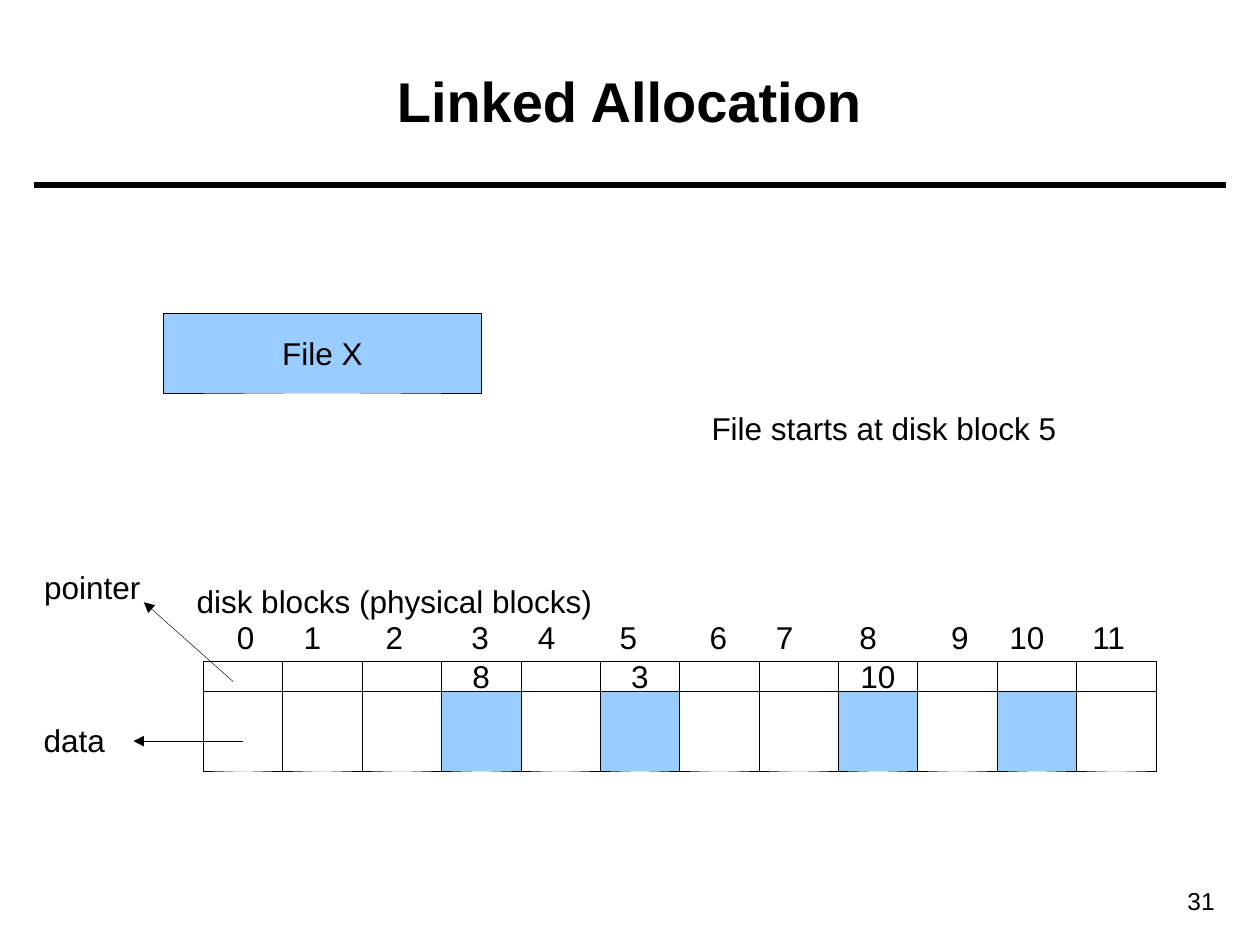
import pptx
import pptx.dml.color
import pptx.enum.shapes
import pptx.enum.text
import pptx.oxml
import pptx.oxml.ns
import pptx.util
from pptx.util import Cm

BLACK = pptx.dml.color.RGBColor(0x00, 0x00, 0x00)
FILE_BLUE = pptx.dml.color.RGBColor(0x99, 0xCC, 0xFF)
ALIGN = pptx.enum.text.PP_ALIGN
ANCHOR = pptx.enum.text.MSO_ANCHOR
AUTO_SIZE = pptx.enum.text.MSO_AUTO_SIZE

# Disk geometry in centimetres
DISK_LEFT, DISK_TOP = 4.1, 13.33
BLOCK_WIDTH, POINTER_HEIGHT, DATA_HEIGHT = 1.6, 0.61, 1.6
LABEL_TOP, LABEL_HEIGHT = 12.34, 1.02
LABEL_CENTRES = [4.95, 6.3, 7.95, 9.68, 11.02, 12.67,
                 14.48, 15.82, 17.5, 19.35, 20.7, 22.35]

# Block of the file -> next block (the last one has no pointer)
FILE_CHAIN = {5: "3", 3: "8", 8: "10", 10: ""}


def write(frame, text, size=18, bold=False, align=ALIGN.CENTER):
    frame.text = text
    paragraph = frame.paragraphs[0]
    paragraph.alignment = align
    for run in paragraph.runs:
        run.font.name = "Arial"
        run.font.size = pptx.util.Pt(size)
        run.font.bold = bold
        run.font.color.rgb = BLACK


def add_text(slide, text, left, top, width, height=LABEL_HEIGHT,
             anchor=ANCHOR.TOP, wrap=False, **style):
    """Add text; unwrapped text stays on one line and its box fits it."""
    box = slide.shapes.add_textbox(Cm(left), Cm(top), Cm(width), Cm(height))
    frame = box.text_frame
    frame.word_wrap = wrap
    frame.auto_size = AUTO_SIZE.NONE if wrap else AUTO_SIZE.SHAPE_TO_FIT_TEXT
    frame.vertical_anchor = anchor
    write(frame, text, **style)


def add_box(slide, left, top, width, height, fill=None, text=""):
    box = slide.shapes.add_shape(pptx.enum.shapes.MSO_SHAPE.RECTANGLE,
                                 Cm(left), Cm(top), Cm(width), Cm(height))
    box.shadow.inherit = False
    box.line.color.rgb = BLACK
    box.line.width = pptx.util.Pt(0.25)
    if fill is None:
        box.fill.background()
    else:
        box.fill.solid()
        box.fill.fore_color.rgb = fill
    if text:
        box.text_frame.word_wrap = False
        box.text_frame.vertical_anchor = ANCHOR.MIDDLE
        write(box.text_frame, text)


def add_line(slide, start, end, width=0.25, arrow=False):
    line = slide.shapes.add_connector(
        pptx.enum.shapes.MSO_CONNECTOR.STRAIGHT,
        Cm(start[0]), Cm(start[1]), Cm(end[0]), Cm(end[1]))
    line.line.color.rgb = BLACK
    line.line.width = pptx.util.Pt(width)
    properties = line.element.spPr
    namespace = pptx.oxml.ns.nsdecls("a")
    if arrow:
        properties.find(pptx.oxml.ns.qn("a:ln")).append(
            pptx.oxml.parse_xml(f'<a:tailEnd {namespace} type="triangle"/>'))
    properties.append(pptx.oxml.parse_xml(f"<a:effectLst {namespace}/>"))


def add_disk(slide):
    """Draw numbered blocks, each with a pointer part above a data part."""
    data_top = DISK_TOP + POINTER_HEIGHT
    for number, centre in enumerate(LABEL_CENTRES):
        left = DISK_LEFT + number * BLOCK_WIDTH
        add_box(slide, left, DISK_TOP, BLOCK_WIDTH, POINTER_HEIGHT,
                text=FILE_CHAIN.get(number, ""))
        add_box(slide, left, data_top, BLOCK_WIDTH, DATA_HEIGHT,
                fill=FILE_BLUE if number in FILE_CHAIN else None)
        label_width = 0.86 if number < 10 else 1.22
        add_text(slide, str(number), centre - label_width / 2, LABEL_TOP,
                 label_width)
    add_text(slide, "disk blocks (physical blocks)", 3.7, 11.6, 8.5)


def main():
    deck = pptx.Presentation()
    deck.slide_width, deck.slide_height = Cm(25.4), Cm(19.05)
    slide = deck.slides.add_slide(deck.slide_layouts[6])

    add_line(slide, (0.69, 3.73), (24.71, 3.73), width=3)
    add_text(slide, "31", 22.1, 17.73, 2.64, 0.86, wrap=True,
             size=14, align=ALIGN.RIGHT)
    add_text(slide, "Linked Allocation", 0.89, 0.43, 23.6, 3.18,
             anchor=ANCHOR.MIDDLE, wrap=True, size=32, bold=True)

    add_disk(slide)
    add_text(slide, "File starts at disk block 5", 14.05, 8.13, 7.54)
    add_box(slide, 3.3, 6.32, 6.4, 1.6, fill=FILE_BLUE, text="File X")

    add_line(slide, (4.7, 13.74), (2.9, 12.14), arrow=True)
    add_line(slide, (4.9, 14.94), (2.69, 14.94), arrow=True)
    add_text(slide, "data", 0.6, 14.42, 1.8)
    add_text(slide, "pointer", 0.59, 11.33, 2.54)

    deck.save("out.pptx")


if __name__ == "__main__":
    main()
